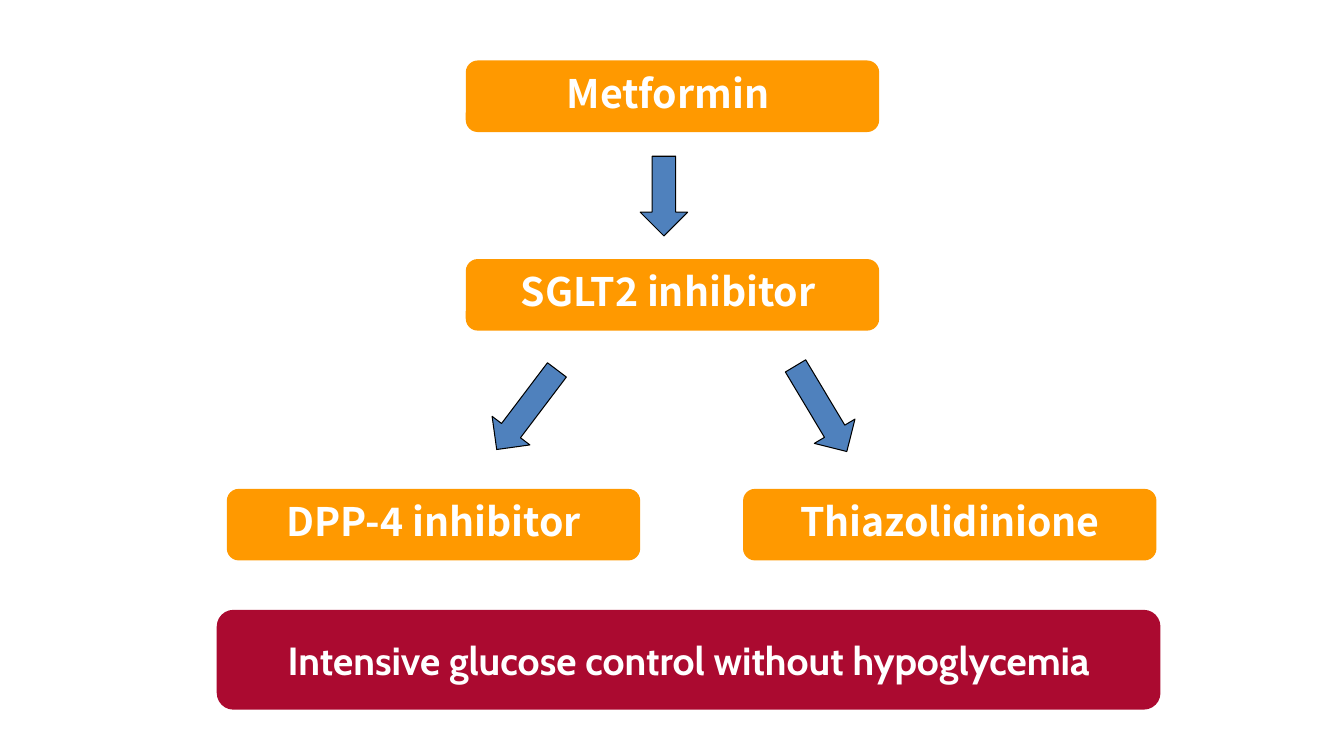
from dataclasses import dataclass

from pptx import Presentation
from pptx.dml.color import RGBColor
from pptx.enum.shapes import MSO_SHAPE as Preset
from pptx.enum.text import MSO_ANCHOR as Anchor, PP_ALIGN as Align
from pptx.shapes.shapetree import SlideShapes
from pptx.util import Inches, Pt


@dataclass(frozen=True)
class Theme:
    drug: RGBColor = RGBColor(0xFF, 0x99, 0x00)
    goal: RGBColor = RGBColor(0xAB, 0x0A, 0x30)
    arrow: RGBColor = RGBColor(0x4F, 0x81, 0xBD)
    outline: RGBColor = RGBColor(0x00, 0x00, 0x00)
    text: RGBColor = RGBColor(0xFF, 0xFF, 0xFF)
    drug_font: str = "Noto Sans CJK KR"
    goal_font: str = "Cabin"
    text_size: Pt = Pt(28)
    outline_width: Pt = Pt(0.75)


THEME = Theme()


@dataclass(frozen=True)
class Step:
    label: str
    left: float
    top: float
    width: float = 4.1
    height: float = 0.71
    fill: RGBColor = THEME.drug
    font: str = THEME.drug_font
    anchor: Anchor = Anchor.TOP


@dataclass(frozen=True)
class Arrow:
    left: float
    top: float
    height: float = 0.99
    rotation: float = 0
    width: float = 0.47


STEPS = [
    Step("Metformin ", 4.62, 0.6),
    Step("SGLT2 inhibitor ", 4.62, 2.57),
    Step("DPP-4 inhibitor", 2.25, 4.85),
    Step("Thiazolidinione", 7.37, 4.85),
    Step("Intensive glucose control without hypoglycemia", 2.15, 6.05, 9.36, 0.99,
         THEME.goal, THEME.goal_font, Anchor.MIDDLE),
]

ARROWS = [
    Arrow(6.35, 1.55, height=0.79),
    Arrow(4.99, 3.57, rotation=37.1),
    Arrow(7.91, 3.56, rotation=329.1),
]


def draw_step(shapes: SlideShapes, step: Step) -> None:
    box = shapes.add_shape(Preset.ROUNDED_RECTANGLE, Inches(step.left), Inches(step.top),
                           Inches(step.width), Inches(step.height))
    box.shadow.inherit = False
    box.fill.solid()
    box.fill.fore_color.rgb = step.fill
    box.line.fill.background()
    frame = box.text_frame
    frame.word_wrap = False
    frame.vertical_anchor = step.anchor
    label = frame.paragraphs[0]
    label.text = step.label
    label.alignment = Align.CENTER
    label.font.name = step.font
    label.font.size = THEME.text_size
    label.font.bold = True
    label.font.color.rgb = THEME.text


def draw_arrow(shapes: SlideShapes, arrow: Arrow) -> None:
    pointer = shapes.add_shape(Preset.DOWN_ARROW, Inches(arrow.left), Inches(arrow.top),
                               Inches(arrow.width), Inches(arrow.height))
    pointer.rotation = arrow.rotation
    pointer.shadow.inherit = False
    pointer.fill.solid()
    pointer.fill.fore_color.rgb = THEME.arrow
    pointer.line.color.rgb = THEME.outline
    pointer.line.width = THEME.outline_width


def main() -> None:
    deck = Presentation()
    deck.slide_width = Inches(13.33)
    deck.slide_height = Inches(7.5)
    slide = deck.slides.add_slide(deck.slide_layouts[6])
    for step in STEPS:
        draw_step(slide.shapes, step)
    for arrow in ARROWS:
        draw_arrow(slide.shapes, arrow)
    deck.save("out.pptx")


if __name__ == "__main__":
    main()
